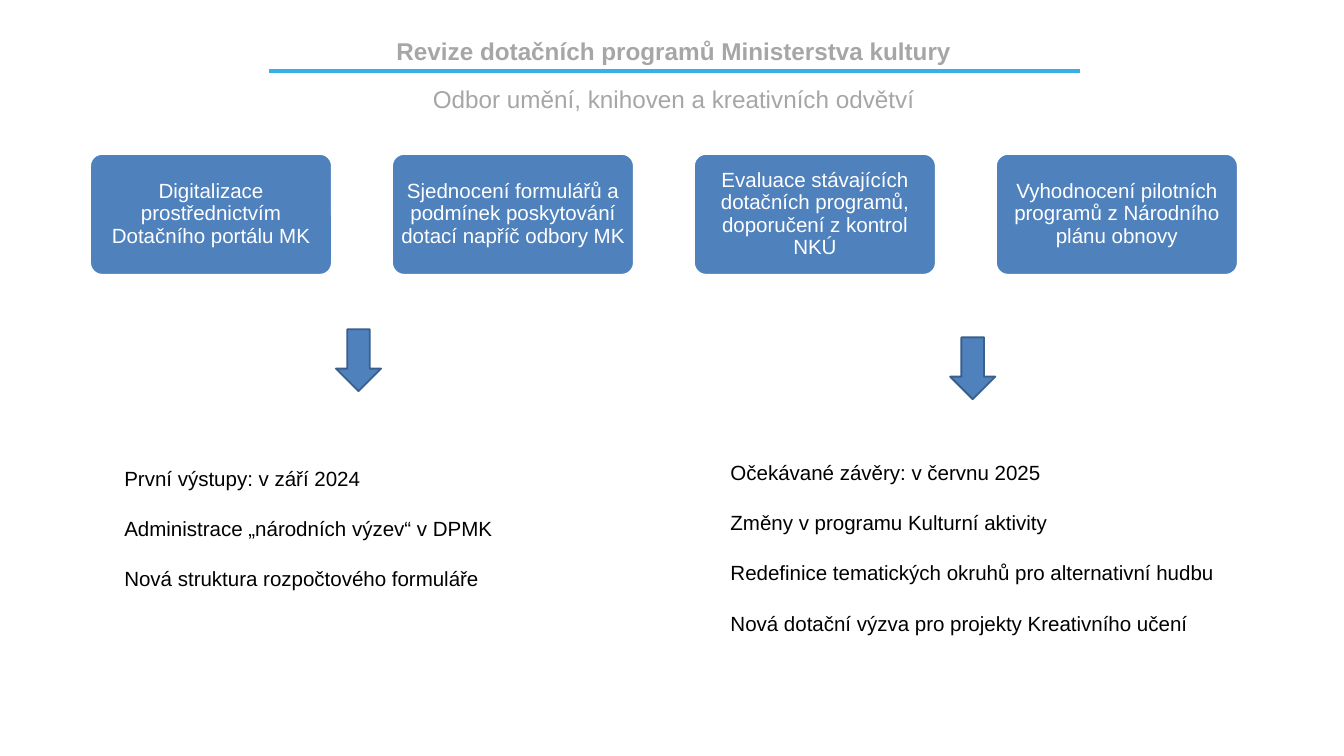
from dataclasses import dataclass

from lxml.etree import SubElement
from pptx import Presentation
from pptx.dml.color import RGBColor
from pptx.enum.shapes import MSO_CONNECTOR, MSO_SHAPE
from pptx.enum.text import MSO_ANCHOR, MSO_AUTO_SIZE, PP_ALIGN
from pptx.oxml.ns import qn
from pptx.util import Inches, Pt


@dataclass(frozen=True)
class Theme:
    """Colours, font and type sizes of the slide."""
    font: str = "Arial"
    gray: str = "A6A6A6"
    rule: str = "37AFE7"
    blue: str = "4F81BD"
    edge: str = "3A5F8C"
    white: str = "FFFFFF"
    black: str = "000000"
    head: int = 26
    text: int = 22


class Deck:
    """Holds the style and the current slide."""

    def __init__(self, theme):
        """Open a wide deck with one two-column slide."""
        self.theme = theme
        self.prs = Presentation()
        self.prs.slide_width, self.prs.slide_height = Inches(20), Inches(11.25)
        self.slide = self.prs.slides.add_slide(self.prs.slide_layouts[3])

    def place(self, shape, box):
        """Move a shape to a box given in inches."""
        shape.left, shape.top, shape.width, shape.height = map(Inches, box)

    def frame(self, shape, pads, anchor=MSO_ANCHOR.TOP):
        """Set wrapping, insets and anchor of a text frame."""
        frame = shape.text_frame
        frame.word_wrap = True
        frame.auto_size = MSO_AUTO_SIZE.NONE
        frame.vertical_anchor = anchor
        frame.margin_left = frame.margin_right = Inches(pads[0])
        frame.margin_top = frame.margin_bottom = Inches(pads[1])
        return frame

    def add_text(self, para, text, size, color, align=PP_ALIGN.LEFT, bold=False):
        """Add one styled run to a paragraph."""
        para.alignment = align
        para.space_before = Pt(0)
        run = para.add_run()
        run.text = text
        font = run.font
        font.name, font.size, font.bold = self.theme.font, Pt(size), bold
        font.color.rgb = RGBColor.from_string(color)

    def head(self, shape, box, text, lead, bold=False):
        """Fill a centred heading with a fixed line pitch."""
        self.place(shape, box)
        para = self.frame(shape, (0, 0)).paragraphs[0]
        para.line_spacing = Pt(lead)
        self.add_text(para, text, self.theme.head, self.theme.gray, PP_ALIGN.CENTER, bold)

    def title(self, box, text):
        """Fill the title placeholder."""
        self.head(self.slide.shapes.title, box, text, 63, True)

    def label(self, box, text):
        """Add the line below the title."""
        area = self.slide.shapes.add_textbox(*map(Inches, box))
        self.head(area, box, text, 42)

    def rule(self, left, right, top):
        """Draw a level line."""
        line = self.slide.shapes.add_connector(
            MSO_CONNECTOR.STRAIGHT, Inches(left), Inches(top), Inches(right), Inches(top))
        line.line.color.rgb = RGBColor.from_string(self.theme.rule)
        line.line.width = Pt(4.5)
        SubElement(line._element.spPr, qn("a:effectLst"))

    def shape(self, kind, box, edge):
        """Add a blue preset shape."""
        shape = self.slide.shapes.add_shape(kind, *map(Inches, box))
        shape.shadow.inherit = False
        shape.fill.solid()
        shape.fill.fore_color.rgb = RGBColor.from_string(self.theme.blue)
        shape.line.color.rgb = RGBColor.from_string(edge)
        shape.line.width = Pt(2)
        return shape

    def card(self, box, text):
        """Add a rounded card with centred text."""
        card = self.shape(MSO_SHAPE.ROUNDED_RECTANGLE, box, self.theme.white)
        card.adjustments[0] = 0.1
        para = self.frame(card, (0.05, 0.03), MSO_ANCHOR.MIDDLE).paragraphs[0]
        para.line_spacing = 0.9
        self.add_text(para, text, self.theme.text, self.theme.white, PP_ALIGN.CENTER)

    def arrow(self, left, top):
        """Add an arrow that points down."""
        self.shape(MSO_SHAPE.DOWN_ARROW, (left, top, 0.67, 0.92), self.theme.edge)

    def items(self, index, box, lines):
        """Fill a body placeholder with plain lines."""
        body = self.slide.placeholders[index]
        self.place(body, box)
        frame = self.frame(body, (0.1, 0.05))
        for spot, text in enumerate(lines):
            para = frame.add_paragraph() if spot else frame.paragraphs[0]
            self.add_text(para, text, self.theme.text, self.theme.black)
            if spot < len(lines) - 1:
                para.space_after = Pt(27.5)
            props = para._p.get_or_add_pPr()
            props.set("marL", "0")
            props.set("indent", "0")
            SubElement(props, qn("a:buNone"))


def main():
    """Build the slide."""
    deck = Deck(Theme())
    deck.rule(4, 16.07, 1.06)
    deck.title((2.8, 0.09, 14.46, 0.76), "Revize dotačních programů Ministerstva kultury")
    deck.label((2.8, 1.11, 14.46, 0.54), "Odbor umění, knihoven a kreativních odvětví")

    cards = (
        "Digitalizace prostřednictvím Dotačního portálu MK",
        "Sjednocení formulářů a podmínek poskytování dotací napříč odbory MK",
        "Evaluace stávajících dotačních programů, doporučení z kontrol NKÚ",
        "Vyhodnocení pilotních programů z Národního plánu obnovy",
    )
    first, last = 1.34, 14.82
    step = (last - first) / (len(cards) - 1)
    for col, text in enumerate(cards):
        deck.card((first + col * step, 2.29, 3.6, 1.8), text)

    deck.arrow(5, 4.9)
    deck.arrow(14.14, 5.02)

    deck.items(1, (1.75, 6.88, 6.67, 1.95), (
        "První výstupy: v září 2024",
        "Administrace „národních výzev“ v DPMK",
        "Nová struktura rozpočtového formuláře",
    ))
    deck.items(2, (10.77, 6.79, 7.42, 2.69), (
        "Očekávané závěry: v červnu 2025",
        "Změny v programu Kulturní aktivity",
        "Redefinice tematických okruhů pro alternativní hudbu",
        "Nová dotační výzva pro projekty Kreativního učení",
    ))
    deck.prs.save("out.pptx")


if __name__ == "__main__":
    main()
